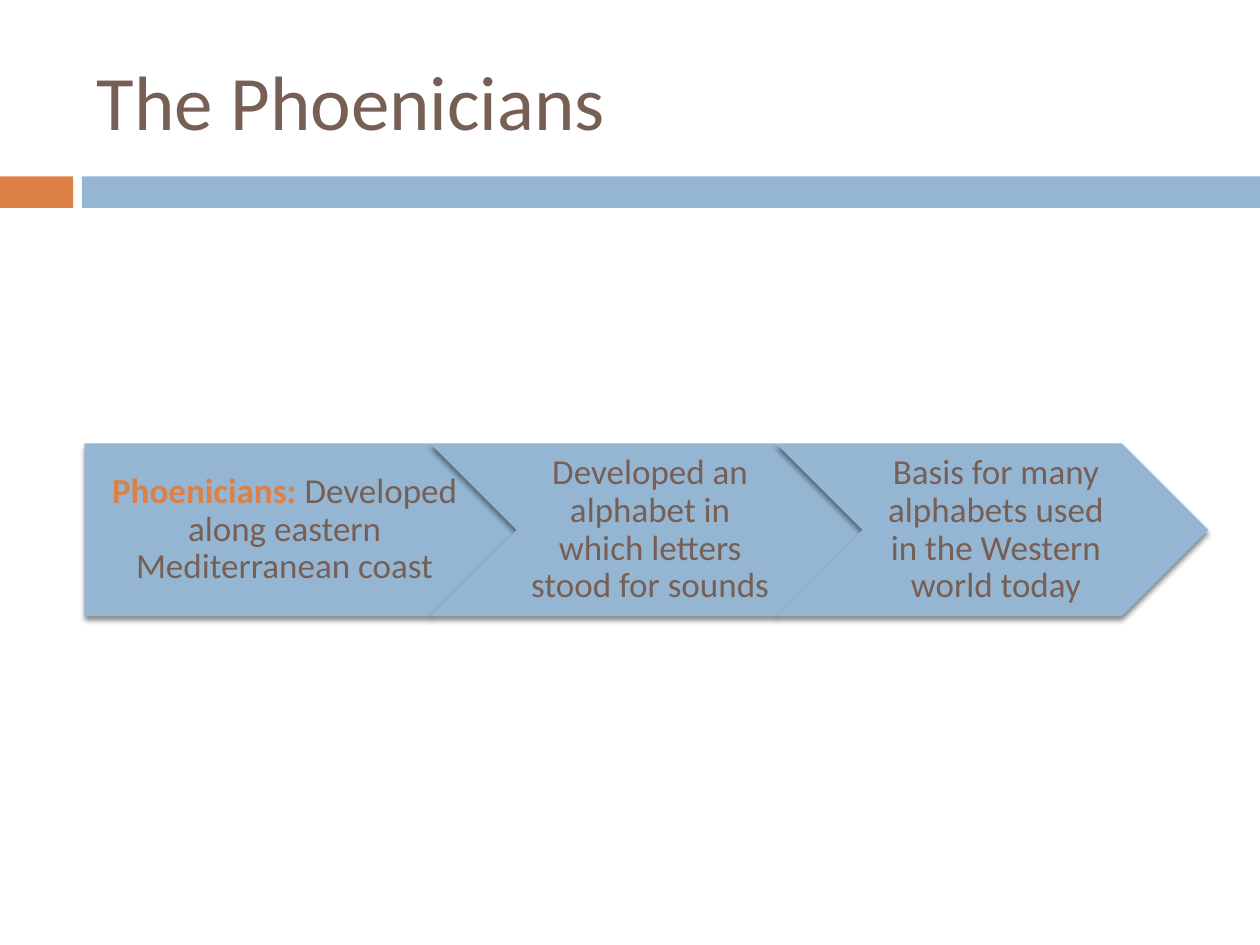
from lxml import etree
from pptx import Presentation
from pptx.dml.color import RGBColor
from pptx.enum.shapes import MSO_SHAPE
from pptx.enum.text import MSO_ANCHOR, PP_ALIGN
from pptx.oxml import parse_xml
from pptx.oxml.ns import nsdecls
from pptx.util import Inches, Pt

ORANGE = RGBColor(0xDD, 0x80, 0x47)
BLUE = RGBColor(0x94, 0xB6, 0xD2)
BROWN = RGBColor(0x77, 0x5F, 0x55)
FONT = "Calibri"

WIDTH, HEIGHT = 10, 7.5
LEFT, CONTENT_W = 0.67, 8.92

STEPS = [
    [("Phoenicians: ", ORANGE, True),
     ("Developed along eastern Mediterranean coast", BROWN, False)],
    [("Developed an alphabet in which letters stood for sounds", BROWN, False)],
    [("Basis for many alphabets used in the Western world today", BROWN, False)],
]


def add_run(p, text, size, color, bold=False):
    r = p.add_run()
    r.text = text
    r.font.name = FONT
    r.font.size = Pt(size)
    r.font.bold = bold
    r.font.color.rgb = color


def add_filled(s, kind, box, color):
    sp = s.shapes.add_shape(kind, *map(Inches, box))
    sp.shadow.inherit = False
    sp.fill.solid()
    sp.fill.fore_color.rgb = color
    sp.line.fill.background()
    return sp


def add_drop_shadow(sp):
    effects = sp.element.spPr.find("{*}effectLst")
    effects.append(parse_xml(
        f'<a:outerShdw {nsdecls("a")} blurRad="{Pt(3)}" dist="{Pt(2.4)}" '
        'dir="5400000" algn="ctr" rotWithShape="0">'
        '<a:srgbClr val="000000"><a:alpha val="45000"/></a:srgbClr>'
        '</a:outerShdw>'))


def set_insets(tf, left, top, right, bottom):
    tf.margin_left, tf.margin_top = Inches(left), Inches(top)
    tf.margin_right, tf.margin_bottom = Inches(right), Inches(bottom)


def add_title(s, box, text):
    tf = s.shapes.add_textbox(*map(Inches, box)).text_frame
    tf.word_wrap = True
    tf.vertical_anchor = MSO_ANCHOR.MIDDLE
    add_run(tf.paragraphs[0], text, 44, BROWN)


def add_band(s, box):
    """Short accent block, a gap, then a bar to the right edge."""
    x, y, w, h = box
    accent, bar = 0.058 * w, 0.065 * w
    add_filled(s, MSO_SHAPE.RECTANGLE, (x, y, accent, h), ORANGE)
    add_filled(s, MSO_SHAPE.RECTANGLE, (x + bar, y, w - bar, h), BLUE)


def add_process(s, box, steps):
    """Row of arrows, each overlapping the next by a fifth of its width."""
    x, y, w, h = box
    pitch = 0.8
    arrow_w = w / (1 + pitch * (len(steps) - 1))
    for i, runs in enumerate(steps):
        kind = MSO_SHAPE.CHEVRON if i else MSO_SHAPE.PENTAGON
        sp = add_filled(s, kind, (x + i * pitch * arrow_w, y, arrow_w, h), BLUE)
        add_drop_shadow(sp)
        tf = sp.text_frame
        tf.word_wrap = True
        tf.vertical_anchor = MSO_ANCHOR.MIDDLE
        set_insets(tf, 0.09 if i else 0.12, 0.06, 0.03, 0.06)
        p = tf.paragraphs[0]
        p.alignment = PP_ALIGN.CENTER
        p.line_spacing = 0.9
        for text, color, bold in runs:
            add_run(p, text, 20, color, bold)


def main():
    prs = Presentation()
    prs.slide_width, prs.slide_height = Inches(WIDTH), Inches(HEIGHT)
    s = prs.slides.add_slide(prs.slide_layouts[6])
    # Header
    add_band(s, (0, 1.4, WIDTH, 0.25))
    add_title(s, (LEFT, 0.25, CONTENT_W, 1.08), "The Phoenicians")
    # Process arrows
    add_process(s, (LEFT, 3.52, CONTENT_W, 1.37), STEPS)
    prs.save("out.pptx")


if __name__ == "__main__":
    main()
